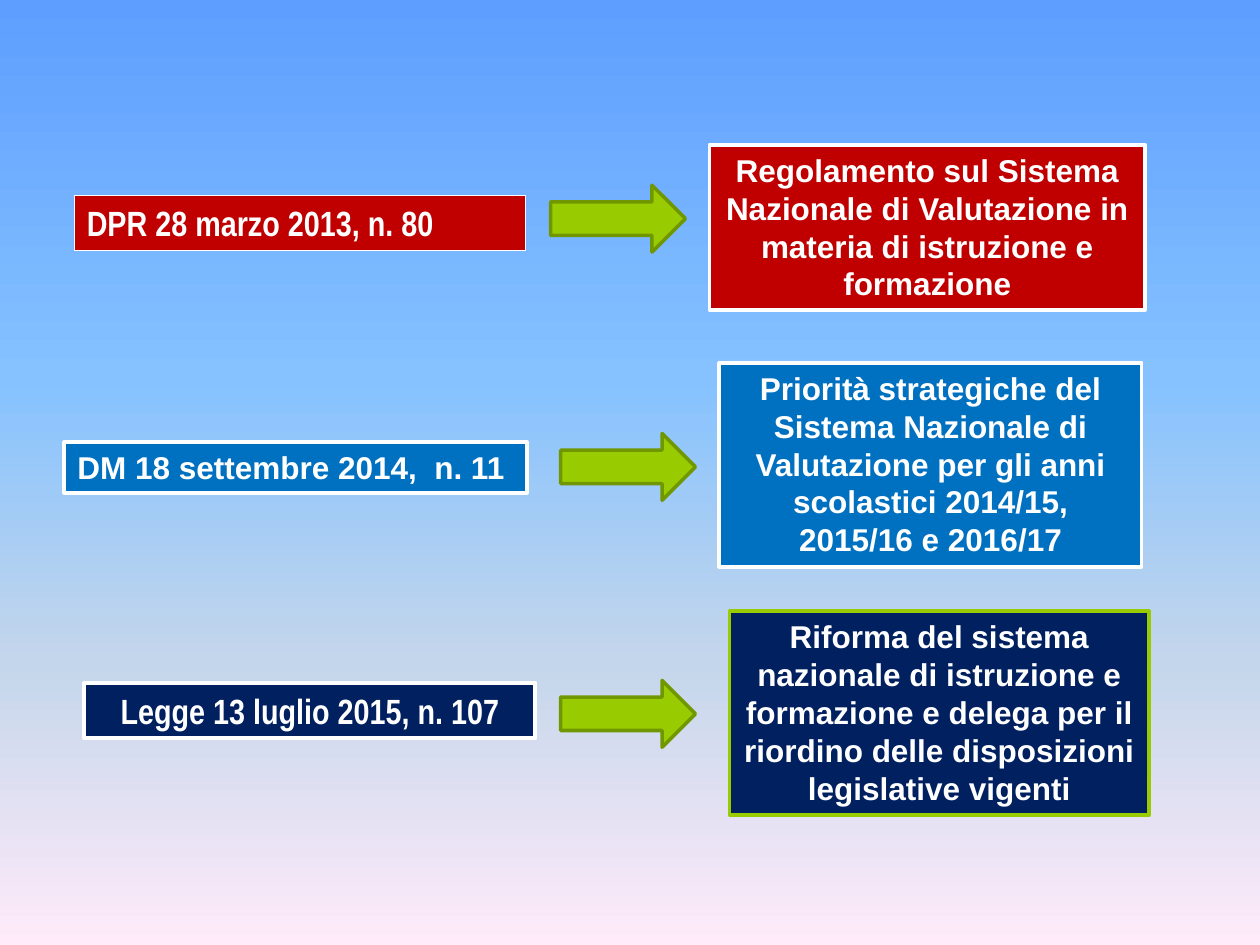
from copy import deepcopy

from pptx import Presentation
from pptx.dml.color import RGBColor
from pptx.enum.shapes import MSO_SHAPE
from pptx.enum.text import MSO_ANCHOR, MSO_AUTO_SIZE, PP_ALIGN
from pptx.oxml.ns import qn
from pptx.util import Inches, Pt

RECTANGLE = MSO_SHAPE.RECTANGLE
RIGHT_ARROW = MSO_SHAPE.RIGHT_ARROW
TOP = MSO_ANCHOR.TOP
GROW = MSO_AUTO_SIZE.SHAPE_TO_FIT_TEXT
LEFT = PP_ALIGN.LEFT
CENTER = PP_ALIGN.CENTER

WIDTH, HEIGHT = Inches(10), Inches(7.5)
WHITE, RED, BLUE, NAVY = "FFFFFF", "C00000", "0070C0", "002060"
LIME, OLIVE = "99CC00", "719700"
SKY = [(0, "5E9EFF"), (0.4, "85C2FF"), (0.7, "C4D6EB"), (1, "FFEBFA")]
WIDE, NARROW = ("Arial", 18), ("Arial Narrow", 20)
ARROW_SIZE = (10.7, 7.07)

ROWS = [
    {
        "fill": RED,
        "law": ("DPR 28 marzo 2013, n. 80", (5.9, 20.67, 35.8, 5.87), 0.75, NARROW, LEFT),
        "arrow": (43.7, 19.6),
        "subject": (
            "Regolamento sul Sistema Nazionale di Valutazione in materia di istruzione e formazione",
            (56.3, 15.33, 34.6, 17.47), WHITE, 2,
        ),
    },
    {
        "fill": BLUE,
        "law": ("DM 18 settembre 2014,  n. 11 ", (5.1, 46.8, 36.7, 5.33), 2.25, WIDE, CENTER),
        "arrow": (44.5, 45.87),
        "subject": (
            "Priorità strategiche del Sistema Nazionale di Valutazione per gli anni "
            "scolastici 2014/15, 2015/16 e 2016/17",
            (57.1, 38.4, 33.5, 21.6), WHITE, 2.25,
        ),
    },
    {
        "fill": NAVY,
        "law": ("Legge 13 luglio 2015, n. 107", (6.7, 72.27, 35.8, 5.87), 2.25, NARROW, CENTER),
        "arrow": (44.5, 72),
        "subject": (
            "Riforma del sistema nazionale di istruzione e formazione e delega per il \n"
            "riordino delle disposizioni legislative vigenti",
            (57.9, 64.67, 33.3, 21.6), LIME, 2,
        ),
    },
]


def color(value):
    return RGBColor.from_string(value)


def paint_background(page):
    fill = page.background.fill
    fill.gradient()
    fill.gradient_angle = 270
    stop_list = page.element.find(".//" + qn("a:gsLst"))
    while len(stop_list) < len(SKY):
        stop_list.append(deepcopy(stop_list[0]))
    for stop, (position, value) in zip(fill.gradient_stops, SKY):
        stop.position = position
        stop.color.rgb = color(value)


def add_block(page, kind, area, fill, line, weight):
    left, top, width, height = area
    block = page.shapes.add_shape(
        kind,
        int(WIDTH * left / 100), int(HEIGHT * top / 100),
        int(WIDTH * width / 100), int(HEIGHT * height / 100),
    )
    block.shadow.inherit = False
    block.fill.solid()
    block.fill.fore_color.rgb = color(fill)
    block.line.color.rgb = color(line)
    block.line.width = Pt(weight)
    return block


def write(block, text, style, alignment):
    frame = block.text_frame
    frame.text = text
    frame.word_wrap = True
    frame.auto_size = GROW
    frame.vertical_anchor = TOP
    name, size = style
    for para in frame.paragraphs:
        para.alignment = alignment
        for span in para.runs:
            span.font.name = name
            span.font.size = Pt(size)
            span.font.bold = True
            span.font.color.rgb = color(WHITE)


def add_row(page, row):
    text, area, weight, style, alignment = row["law"]
    law = add_block(page, RECTANGLE, area, row["fill"], WHITE, weight)
    write(law, text, style, alignment)
    add_block(page, RIGHT_ARROW, row["arrow"] + ARROW_SIZE, LIME, OLIVE, 2)
    text, area, line, weight = row["subject"]
    subject = add_block(page, RECTANGLE, area, row["fill"], line, weight)
    write(subject, text, WIDE, CENTER)


def main():
    deck = Presentation()
    deck.slide_width, deck.slide_height = WIDTH, HEIGHT
    page = deck.slides.add_slide(deck.slide_layouts[6])
    paint_background(page)
    for row in ROWS:
        add_row(page, row)
    deck.save("out.pptx")


if __name__ == "__main__":
    main()
